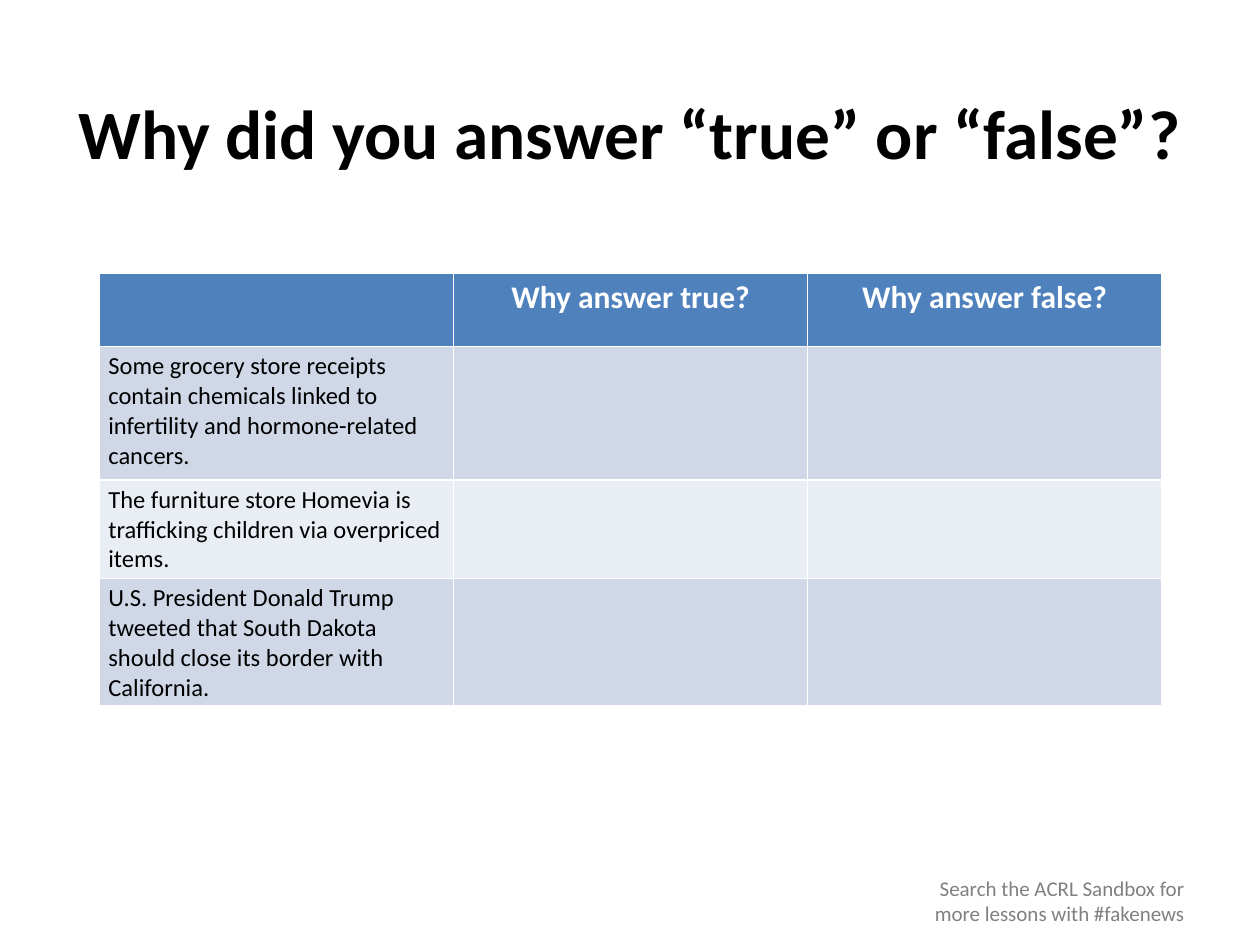
from pptx import Presentation
from pptx import util as u
from pptx.dml.color import RGBColor
from pptx.enum import text

BLACK = RGBColor(0x00, 0x00, 0x00)
WHITE = RGBColor(0xFF, 0xFF, 0xFF)
GREY = RGBColor(0x80, 0x80, 0x80)
HEADER_BLUE = RGBColor(0x4F, 0x81, 0xBD)
BANDS = [RGBColor(0xE9, 0xED, 0xF4), RGBColor(0xD0, 0xD8, 0xE8)]

ROWS = [
    ["", "Why answer true?", "Why answer false?"],
    ["Some grocery store receipts contain chemicals linked to infertility "
     "and hormone-related cancers.", "", ""],
    ["The furniture store Homevia is trafficking children via overpriced "
     "items.", "", ""],
    ["U.S. President Donald Trump tweeted that South Dakota should close "
     "its border with California.", "", ""],
]
ROW_HEIGHTS = [0.58, 1.06, 0.75, 0.75]
COLUMN_WIDTH = 2.81


def style(paragraph, size, color, bold=False, align=text.PP_ALIGN.LEFT):
    paragraph.alignment = align
    font = paragraph.font
    font.name, font.size, font.bold = "Calibri", u.Pt(size), bold
    font.color.rgb = color


deck = Presentation()
deck.slide_width, deck.slide_height = u.Inches(10), u.Inches(7.5)
slide = deck.slides.add_slide(deck.slide_layouts[5])

# Footer hint
hint = slide.shapes.add_textbox(u.Inches(7.17), u.Inches(6.9),
                                u.Inches(2.33), u.Inches(0.5)).text_frame
hint.word_wrap = True
hint.text = "Search the ACRL Sandbox for more lessons with #fakenews"
style(hint.paragraphs[0], 12, GREY, align=text.PP_ALIGN.RIGHT)

# Title
title = slide.shapes.title
title.left, title.top = u.Inches(0.5), u.Inches(0.42)
title.width, title.height = u.Inches(9), u.Inches(1.25)
title.text_frame.text = "Why did you answer “true” or “false”?"
title.text_frame.vertical_anchor = text.MSO_ANCHOR.MIDDLE
style(title.text_frame.paragraphs[0], 39.6, BLACK, True, text.PP_ALIGN.CENTER)

# Answer table
answers = slide.shapes.add_table(
    len(ROWS), len(ROWS[0]), u.Inches(0.79), u.Inches(2.17),
    u.Inches(COLUMN_WIDTH * len(ROWS[0])), u.Inches(sum(ROW_HEIGHTS))).table
for column in answers.columns:
    column.width = u.Inches(COLUMN_WIDTH)
for r, (row, height) in enumerate(zip(ROWS, ROW_HEIGHTS)):
    answers.rows[r].height = u.Inches(height)
    for c, wording in enumerate(row):
        cell = answers.cell(r, c)
        cell.margin_left = cell.margin_right = u.Inches(0.07)
        cell.margin_top = cell.margin_bottom = u.Inches(0.04)
        cell.fill.solid()
        cell.fill.fore_color.rgb = BANDS[r % 2] if r else HEADER_BLUE
        cell.text = wording
        if r:
            style(cell.text_frame.paragraphs[0], 14, BLACK)
        else:
            style(cell.text_frame.paragraphs[0], 18, WHITE, True,
                  text.PP_ALIGN.CENTER)

deck.save("out.pptx")
